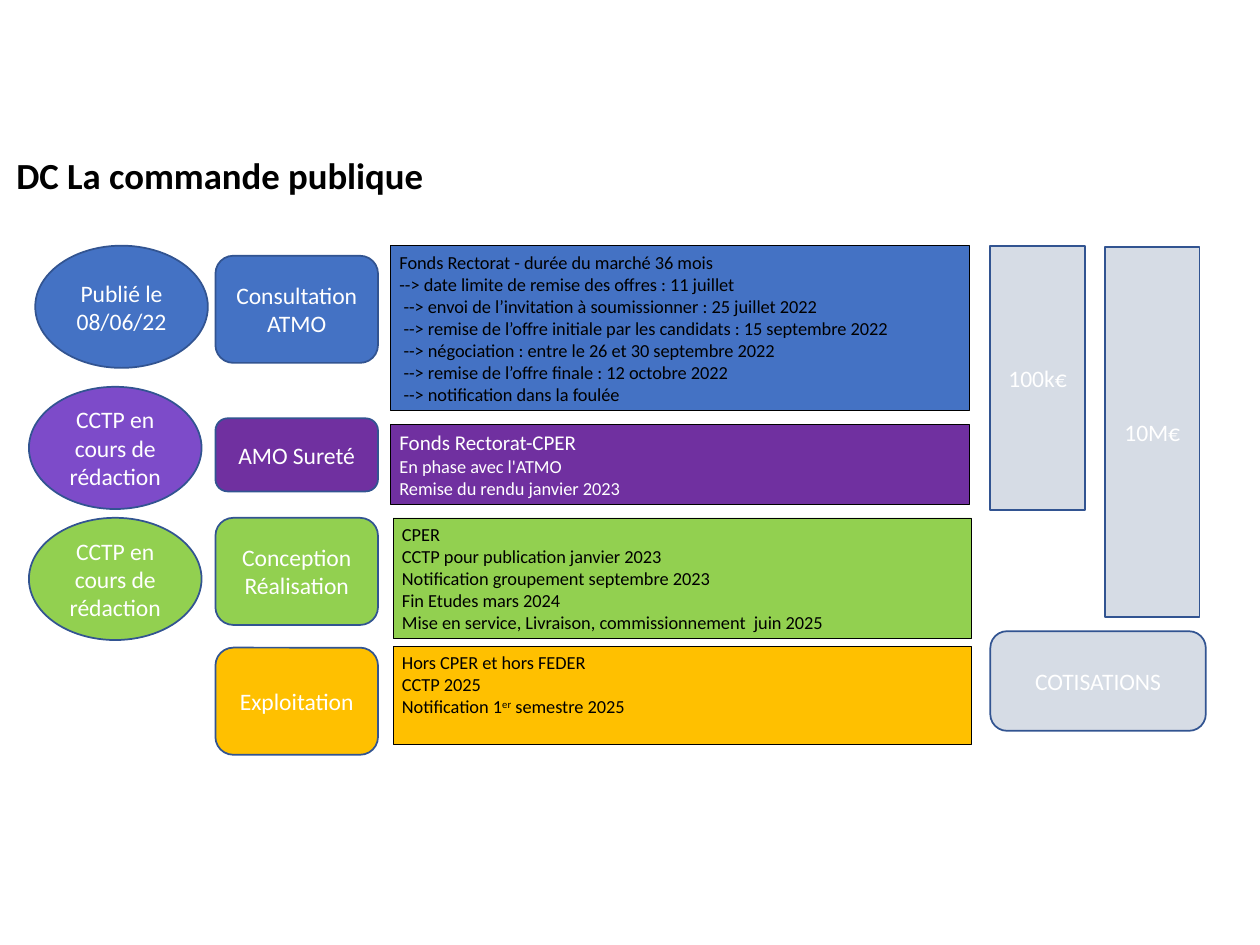
from dataclasses import dataclass

from pptx import Presentation
from pptx.dml.color import RGBColor
from pptx.enum.shapes import MSO_SHAPE
from pptx.enum.text import MSO_ANCHOR, PP_ALIGN
from pptx.util import Inches, Pt

RECT = MSO_SHAPE.RECTANGLE
ROUND = MSO_SHAPE.ROUNDED_RECTANGLE
OVAL = MSO_SHAPE.OVAL
TOP, MIDDLE = MSO_ANCHOR.TOP, MSO_ANCHOR.MIDDLE
CENTER = PP_ALIGN.CENTER

BLACK, WHITE, OUTLINE = "000000", "FFFFFF", "325491"
BLUE, PURPLE, VIOLET = "4472C4", "7030A0", "7D4BC9"
GREEN, GOLD, GREY = "92D050", "FFC000", "D6DCE5"
STAGE_LEFT, STAGE_W = 1.71, 1.29
STATUS_W, STATUS_H = 1.37, 0.97
NOTE_W = 4.59


@dataclass
class Label:
    text: str
    kind: MSO_SHAPE
    fill: str
    left: float
    top: float
    width: float
    height: float


@dataclass
class Note:
    lines: list[str]
    fill: str
    left: float
    top: float
    height: float
    color: str = BLACK
    first_size: float = 10.5


def stage(text: str, fill: str, top: float, height: float = 0.85) -> Label:
    """Describe a procurement stage."""
    return Label(text, ROUND, fill, STAGE_LEFT, top, STAGE_W, height)


def status(text: str, fill: str, left: float, top: float) -> Label:
    """Describe the progress of a stage."""
    return Label(text, OVAL, fill, left, top, STATUS_W, STATUS_H)


LABELS = [
    stage("Consultation ATMO", BLUE, 2.03),
    stage("AMO Sureté", PURPLE, 3.32, 0.58),
    stage("Conception Réalisation", GREEN, 4.11),
    stage("Exploitation", GOLD, 5.14),
    status("Publié le 08/06/22", BLUE, 0.28, 1.95),
    status("CCTP en cours de rédaction", VIOLET, 0.23, 3.07),
    status("CCTP en cours de rédaction", GREEN, 0.23, 4.11),
    Label("100k€", RECT, GREY, 7.86, 1.95, 0.75, 2.1),
    Label("10M€", RECT, GREY, 8.77, 1.96, 0.75, 2.94),
    Label("COTISATIONS", ROUND, GREY, 7.86, 5.01, 1.71, 0.79),
]

NOTES = [
    Note(["Fonds Rectorat - durée du marché 36 mois",
          "--> date limite de remise des offres : 11 juillet",
          " --> envoi de l’invitation à soumissionner : 25 juillet 2022\n"
          " --> remise de l’offre initiale par les candidats : 15 septembre 2022\n"
          " --> négociation : entre le 26 et 30 septembre 2022\n"
          " --> remise de l’offre finale : 12 octobre 2022\n"
          " --> notification dans la foulée"],
         BLUE, 3.1, 1.95, 1.31),
    Note(["Fonds Rectorat-CPER", "En phase avec l'ATMO",
          "Remise du rendu janvier 2023"],
         PURPLE, 3.1, 3.37, 0.63, WHITE, 12),
    Note(["CPER", "CCTP pour publication janvier 2023",
          "Notification groupement septembre 2023", "Fin Etudes mars 2024",
          "Mise en service, Livraison, commissionnement  juin 2025"],
         GREEN, 3.12, 4.11, 0.96),
    Note(["Hors CPER et hors FEDER", "CCTP 2025",
          "Notification 1^er^ semestre 2025"],
         GOLD, 3.12, 5.13, 0.78),
]


def rgb(value: str) -> RGBColor:
    """Turn a hex string into a colour."""
    return RGBColor.from_string(value)


def set_frame(tf, anchor: MSO_ANCHOR) -> None:
    """Set wrapping, anchor and margins of a text frame."""
    tf.word_wrap = True
    tf.vertical_anchor = anchor
    tf.margin_left = tf.margin_right = Inches(0.07)
    tf.margin_top = tf.margin_bottom = Inches(0.04)


def set_font(p, size: float, color: str, bold: bool = False) -> None:
    """Set the font of a paragraph."""
    p.font.name = "Calibri"
    p.font.size = Pt(size)
    p.font.bold = bold
    p.font.color.rgb = rgb(color)


def write_line(p, line: str) -> None:
    """Write a line, raising what stands between carets."""
    p.text, *rest = line.split("^")
    for i, part in enumerate(rest):
        r = p.add_run()
        r.text = part
        if i % 2 == 0:
            r._r.get_or_add_rPr().set("baseline", "30000")


def add_box(s, kind: MSO_SHAPE, left: float, top: float, width: float,
            height: float, fill: str, line: str, weight: float):
    """Add a filled, outlined shape."""
    sp = s.shapes.add_shape(kind, Inches(left), Inches(top),
                            Inches(width), Inches(height))
    sp.shadow.inherit = False
    sp.fill.solid()
    sp.fill.fore_color.rgb = rgb(fill)
    sp.line.color.rgb = rgb(line)
    sp.line.width = Pt(weight)
    return sp


def add_title(s, text: str) -> None:
    """Add the slide title."""
    sp = s.shapes.add_textbox(Inches(0.06), Inches(1.17),
                              Inches(9.87), Inches(1.34))
    set_frame(sp.text_frame, TOP)
    p = sp.text_frame.paragraphs[0]
    p.text = text
    set_font(p, 21, BLACK, True)


def add_label(s, label: Label) -> None:
    """Add a shape with centred text."""
    sp = add_box(s, label.kind, label.left, label.top, label.width,
                 label.height, label.fill, OUTLINE, 1)
    set_frame(sp.text_frame, MIDDLE)
    p = sp.text_frame.paragraphs[0]
    p.text = label.text
    p.alignment = CENTER
    set_font(p, 13.5, WHITE)


def add_note(s, note: Note) -> None:
    """Add the details of a stage."""
    sp = add_box(s, RECT, note.left, note.top, NOTE_W, note.height,
                 note.fill, BLACK, 0.25)
    tf = sp.text_frame
    set_frame(tf, TOP)
    for i, line in enumerate(note.lines):
        p = tf.add_paragraph() if i else tf.paragraphs[0]
        write_line(p, line)
        p.alignment = PP_ALIGN.LEFT
        set_font(p, 10.5 if i else note.first_size, note.color)


def main() -> None:
    """Build the slide and save it."""
    prs = Presentation()
    prs.slide_width, prs.slide_height = Inches(10), Inches(7.5)
    s = prs.slides.add_slide(prs.slide_layouts[6])
    add_title(s, "DC La commande publique")
    for label in LABELS:
        add_label(s, label)
    for note in NOTES:
        add_note(s, note)
    prs.save("out.pptx")


if __name__ == "__main__":
    main()
